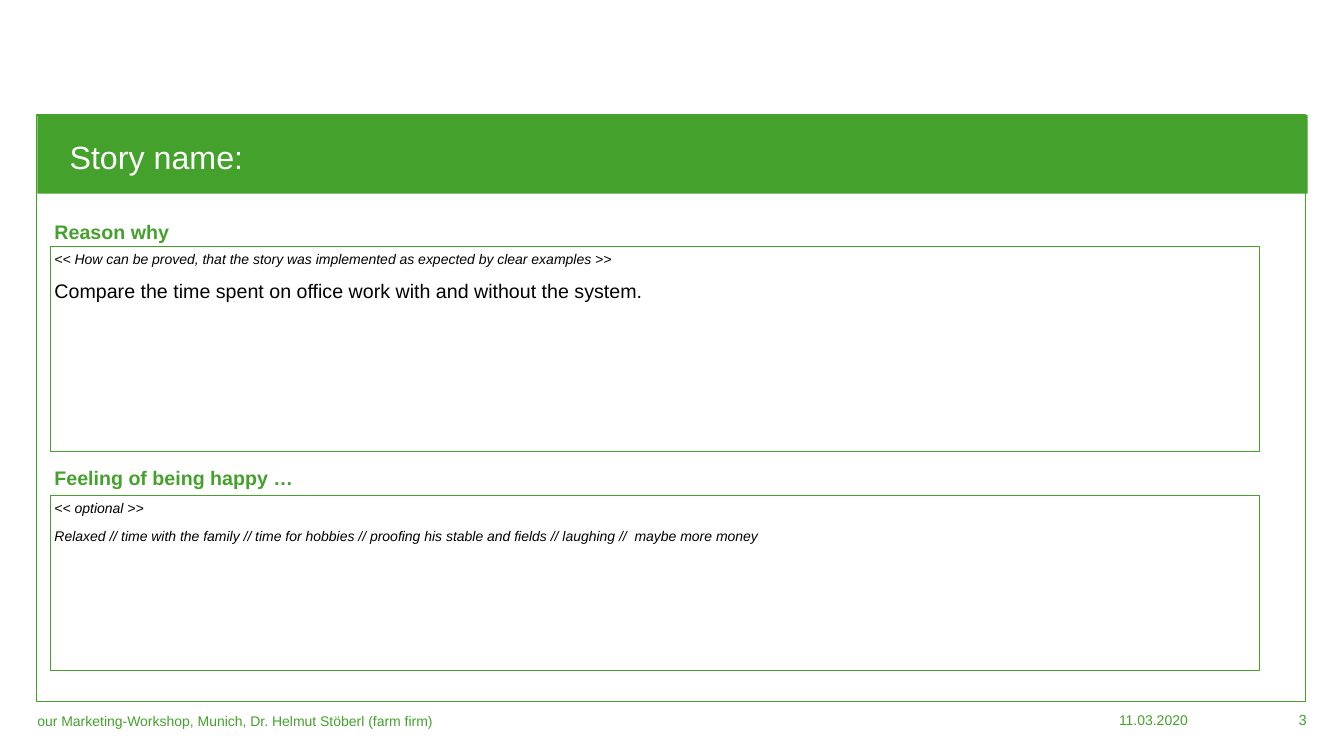
from pptx import Presentation
from pptx.dml.color import RGBColor
from pptx.enum.shapes import MSO_SHAPE as Shape
from pptx.enum.text import MSO_ANCHOR as Anchor, PP_ALIGN as Align
from pptx.util import Inches, Pt

COLORS = {"green": "44A12C", "white": "FFFFFF", "black": "000000"}
PANEL_LEFT, PANEL_WIDTH = 0.5, 11.99
PADDING = 0.04


def add_box(left, top, width, height, fill=None, line_width=None):
    box = slide.shapes.add_shape(
        Shape.RECTANGLE, Inches(left), Inches(top), Inches(width), Inches(height))
    box.shadow.inherit = False
    if fill:
        box.fill.solid()
        box.fill.fore_color.rgb = RGBColor.from_string(COLORS[fill])
    else:
        box.fill.background()
    if line_width:
        box.line.color.rgb = RGBColor.from_string(COLORS["green"])
        box.line.width = Pt(line_width)
    else:
        box.line.fill.background()
    return box


def write(shape, lines, color="green", bold=False, padding=0,
          anchor=Anchor.TOP, align=Align.LEFT):
    """Fill a shape with lines given as (text, size, italic)."""
    frame = shape.text_frame
    frame.word_wrap = True
    frame.vertical_anchor = anchor
    frame.margin_left = frame.margin_right = Inches(padding)
    frame.margin_top = frame.margin_bottom = Inches(padding)
    frame.text = "\n".join(text for text, size, italic in lines)
    for index, (paragraph, (text, size, italic)) in enumerate(zip(frame.paragraphs, lines)):
        paragraph.alignment = align
        if index:
            paragraph.space_before = Pt(8)
        font = paragraph.runs[0].font
        font.name, font.size = "Arial", Pt(size)
        font.bold, font.italic = bold, italic
        font.color.rgb = RGBColor.from_string(COLORS[color])


presentation = Presentation()
presentation.slide_width, presentation.slide_height = Inches(13.33), Inches(7.5)
slide = presentation.slides.add_slide(presentation.slide_layouts[6])

# Frame and title band
add_box(0.36, 1.14, 12.59, 5.82, fill="white", line_width=1)
add_box(0.37, 1.14, 12.6, 0.78, fill="green")

# Title and footer
labels = [
    ("Story name:", 23, "white", (0.69, 1.4, 6.95, 0.35), Anchor.MIDDLE, Align.LEFT),
    ("our Marketing-Workshop, Munich, Dr. Helmut Stöberl (farm firm)", 10, "green",
     (0.37, 6.95, 9.89, 0.4), Anchor.MIDDLE, Align.LEFT),
    ("11.03.2020", 10, "green", (7.94, 7.06, 3.84, 0.17), Anchor.MIDDLE, Align.RIGHT),
    ("3", 10.5, "green", (11.92, 7.05, 1.04, 0.18), Anchor.TOP, Align.RIGHT),
]
for text, size, color, place, anchor, align in labels:
    label = slide.shapes.add_textbox(*map(Inches, place))
    write(label, [(text, size, False)], color, anchor=anchor, align=align)
    if text == "Story name:":
        label.text_frame.paragraphs[0].line_spacing = 0.9

# Headed panels
panels = [
    ("Reason why", 2.14, 2.45, 2.03, [
        ("<< How can be proved, that the story was implemented as expected by clear examples >>",
         10, True),
        ("Compare the time spent on office work with and without the system.", 14, False)]),
    ("Feeling of being happy …", 4.58, 4.92, 1.73, [
        ("<< optional >>", 10, True),
        ("Relaxed // time with the family // time for hobbies // proofing his stable and fields"
         " // laughing //  maybe more money", 10, True)]),
]
for heading, heading_top, panel_top, panel_height, lines in panels:
    heading_box = slide.shapes.add_textbox(
        Inches(PANEL_LEFT), Inches(heading_top), Inches(2.6), Inches(0.32))
    write(heading_box, [(heading, 14, False)], bold=True, padding=PADDING)
    panel = add_box(PANEL_LEFT, panel_top, PANEL_WIDTH, panel_height, line_width=0.75)
    write(panel, lines, "black", padding=PADDING)

presentation.save("out.pptx")
